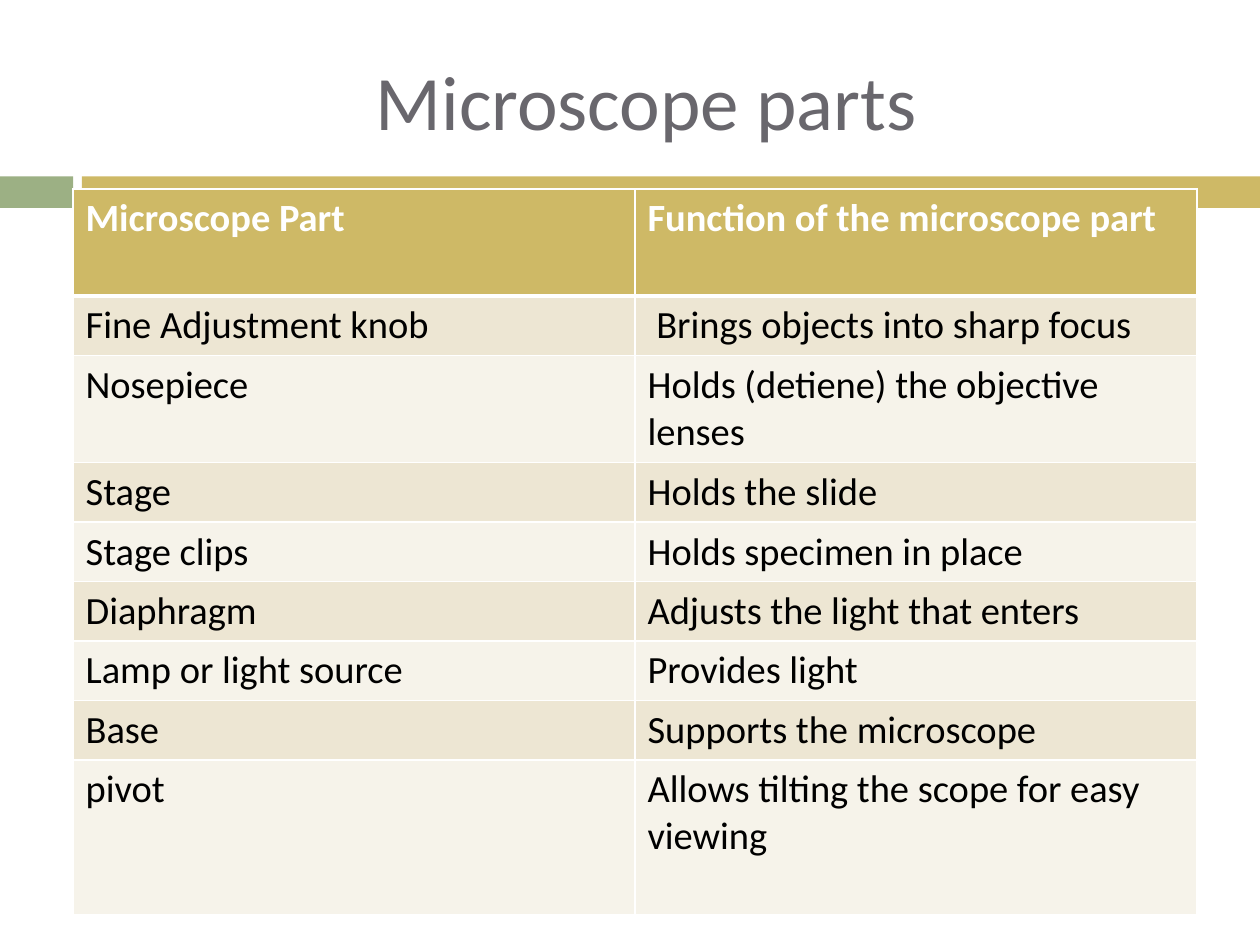
from dataclasses import dataclass

from lxml import etree
from pptx import Presentation
from pptx.dml.color import RGBColor
from pptx.enum import shapes, text
from pptx.oxml import ns
from pptx.util import Inches, Pt


@dataclass(frozen=True)
class Theme:
    """Colours, font and type sizes of the slide."""
    gold: str = "CEB966"
    green: str = "9CB084"
    title: str = "69676D"
    white: str = "FFFFFF"
    black: str = "000000"
    stripes: tuple = ("EDE6D3", "F6F3EA")
    font: str = "Calibri"
    title_size: int = 44
    table_size: int = 22


THEME = Theme()
PARTS = [
    ("Microscope Part", "Function of the microscope part"),
    ("Fine Adjustment knob", " Brings objects into sharp focus"),
    ("Nosepiece", "Holds (detiene) the objective lenses"),
    ("Stage", "Holds the slide"),
    ("Stage clips", "Holds specimen in place"),
    ("Diaphragm", "Adjusts the light that enters"),
    ("Lamp or light source", "Provides light"),
    ("Base", "Supports the microscope"),
    ("pivot", "Allows tilting the scope for easy viewing"),
]
LINE_HEIGHT = 0.47
TALL_ROWS = {0: 0.85, 2: 0.85, 8: 1.23}


def write(frame, words, size, color, bold=False):
    """Put words in a text frame and format their runs."""
    frame.text = words
    for run in frame.paragraphs[0].runs:
        run.font.name = THEME.font
        run.font.size = Pt(size)
        run.font.bold = bold
        run.font.color.rgb = RGBColor.from_string(color)


def add_band(slide, left, top, width, height):
    """Draw the two-coloured band under the title."""
    green_width, gap = Inches(0.58), Inches(0.07)
    gold_left = left + green_width + gap
    pieces = [(left, green_width, THEME.green),
              (gold_left, left + width - gold_left, THEME.gold)]
    for piece_left, piece_width, color in pieces:
        piece = slide.shapes.add_shape(shapes.MSO_SHAPE.RECTANGLE, piece_left, top, piece_width, height)
        piece.shadow.inherit = False
        piece.fill.solid()
        piece.fill.fore_color.rgb = RGBColor.from_string(color)
        piece.line.fill.background()


def place_title(slide, left, top, width, height):
    """Move and format the title placeholder."""
    title = slide.shapes.title
    title.left, title.top, title.width, title.height = left, top, width, height
    write(title.text_frame, "Microscope parts", THEME.title_size, THEME.title)
    title.text_frame.vertical_anchor = text.MSO_ANCHOR.MIDDLE
    title.text_frame.paragraphs[0].alignment = text.PP_ALIGN.CENTER


def add_borders(cell, widths):
    """Give a cell white borders, with widths in points by side."""
    properties = cell._tc.get_or_add_tcPr()
    for side, width in widths.items():
        line = etree.SubElement(properties, ns.qn(f"a:ln{side}"), w=str(Pt(width)))
        fill = etree.SubElement(line, ns.qn("a:solidFill"))
        etree.SubElement(fill, ns.qn("a:srgbClr"), val=THEME.white)


def add_parts_table(slide, left, top, width, height):
    """Add the striped table of parts and their functions."""
    table = slide.shapes.add_table(len(PARTS), 2, left, top, width, height).table
    for column in table.columns:
        column.width = width // 2
    for index, entries in enumerate(PARTS):
        header = index == 0
        table.rows[index].height = Inches(TALL_ROWS.get(index, LINE_HEIGHT))
        background = THEME.gold if header else THEME.stripes[(index - 1) % 2]
        borders = {"L": 1, "R": 1, "T": 3 if index == 1 else 1, "B": 3 if header else 1}
        for cell, words in zip(table.rows[index].cells, entries):
            write(cell.text_frame, words, THEME.table_size,
                  THEME.white if header else THEME.black, header)
            add_borders(cell, borders)
            cell.fill.solid()
            cell.fill.fore_color.rgb = RGBColor.from_string(background)


def main():
    """Build and save the slide."""
    deck = Presentation()
    deck.slide_width, deck.slide_height = Inches(10), Inches(7.5)
    slide = deck.slides.add_slide(deck.slide_layouts[5])
    add_band(slide, Inches(0), Inches(1.4), deck.slide_width, Inches(0.25))
    place_title(slide, Inches(0.67), Inches(0.25), Inches(8.92), Inches(1.08))
    add_parts_table(slide, Inches(0.58), Inches(1.5), Inches(8.92), Inches(5.75))
    deck.save("out.pptx")


if __name__ == "__main__":
    main()
